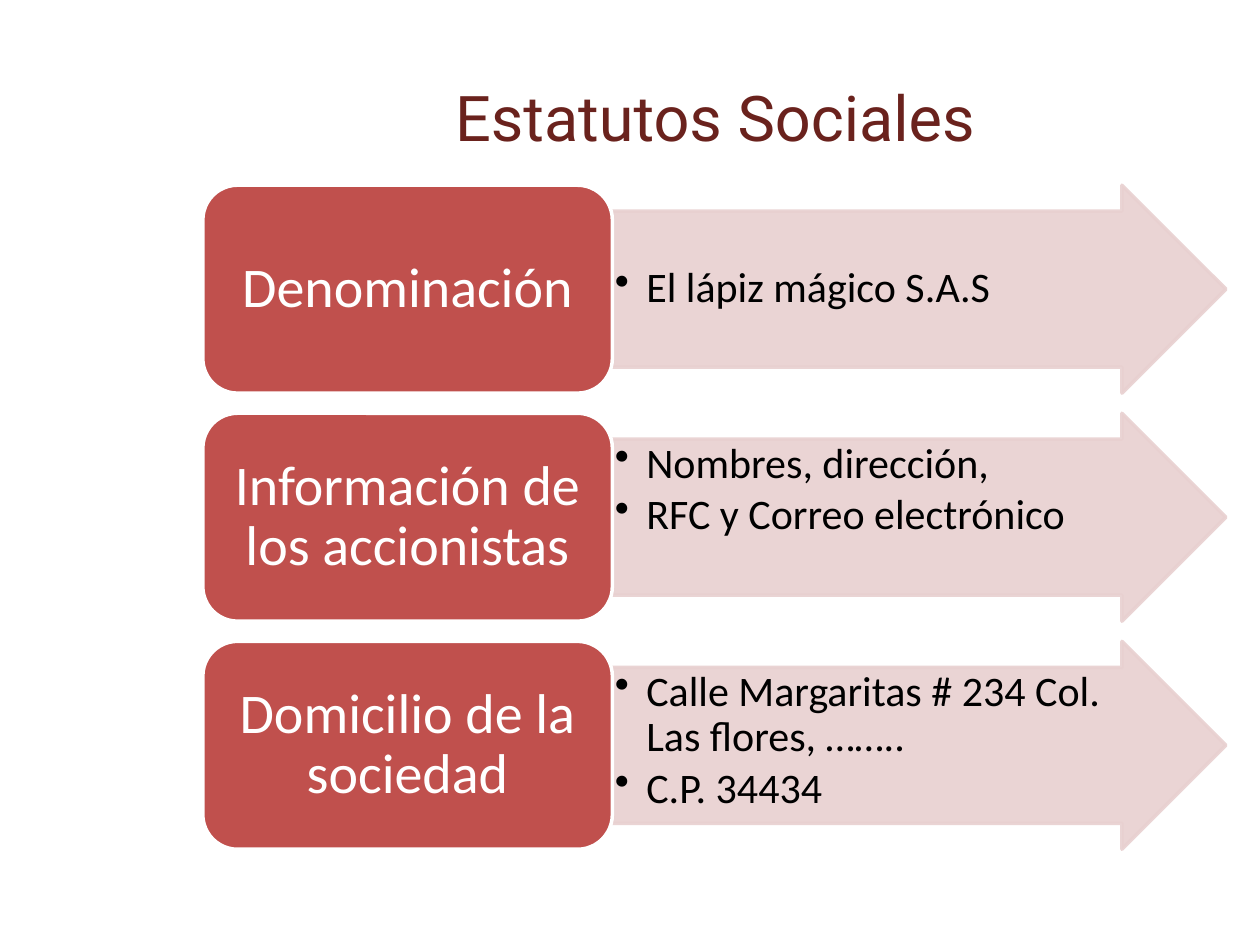
from dataclasses import dataclass

from lxml import etree
from pptx import Presentation
from pptx import util as u
from pptx.dml.color import RGBColor
from pptx.enum import shapes, text
from pptx.oxml.ns import qn


@dataclass(frozen=True)
class Theme:
    head: str = "Roboto"
    body: str = "Calibri"
    wine: str = "6A221D"
    red: str = "C0504D"
    pink: str = "E8D0D0"
    white: str = "FFFFFF"
    black: str = "000000"
    big: int = 36
    mid: int = 32
    small: int = 24
    line: int = 2
    alpha: int = 90


T = Theme()
LEFT, TOP = 1.61, 1.47
BOX_W, ARROW_W = 3.25, 4.87
ROW_H, STEP = 1.65, 1.81
ROWS = [
    ("Denominación", ["El lápiz mágico S.A.S"]),
    ("Información de los accionistas",
     ["Nombres, dirección,", "RFC y Correo electrónico"]),
    ("Domicilio de la sociedad",
     ["Calle Margaritas # 234 Col. Las flores, ……..", "C.P. 34434"]),
]


def fade(fill):
    """Make a solid fill slightly transparent."""
    color = fill._xPr.find(qn("a:solidFill"))[0]
    etree.SubElement(color, qn("a:alpha"), val=str(T.alpha * 1000))


def bullet(par):
    par.level = 1
    props = par._p.get_or_add_pPr()
    props.set("marL", str(u.Inches(0.25)))
    props.set("indent", str(u.Inches(-0.25)))
    etree.SubElement(props, qn("a:buChar"), char="•")


def write(shape, lines, size, color, font=T.body, align=text.PP_ALIGN.CENTER,
          anchor=text.MSO_ANCHOR.MIDDLE, pad=(0.1, 0.05), after=0,
          lead=0.9, dots=False):
    frame = shape.text_frame
    frame.word_wrap = True
    frame.vertical_anchor = anchor
    frame.margin_left = frame.margin_right = u.Inches(pad[0])
    frame.margin_top = frame.margin_bottom = u.Inches(pad[1])
    for i, line in enumerate(lines):
        par = frame.add_paragraph() if i else frame.paragraphs[0]
        par.alignment = align
        par.line_spacing = lead
        par.space_before = u.Pt(0)
        par.space_after = u.Pt(after)
        if dots:
            bullet(par)
        run = par.add_run()
        run.text = line
        run.font.size = u.Pt(size)
        run.font.name = font
        run.font.color.rgb = RGBColor.from_string(color)


def block(slide, kind, x, y, w, fill, line):
    shape = slide.shapes.add_shape(
        kind, *(u.Inches(v) for v in (x, y, w, ROW_H)))
    shape.shadow.inherit = False
    shape.fill.solid()
    shape.fill.fore_color.rgb = RGBColor.from_string(fill)
    shape.line.color.rgb = RGBColor.from_string(line)
    shape.line.width = u.Pt(T.line)
    return shape


def arrow(slide, y, items):
    shape = block(slide, shapes.MSO_SHAPE.RIGHT_ARROW, LEFT + BOX_W, y,
                  ARROW_W, T.pink, T.pink)
    shape.adjustments[0] = 0.75
    shape.adjustments[1] = 0.5
    fade(shape.fill)
    fade(shape.line.fill)
    spot = text.MSO_ANCHOR.TOP if len(items) > 1 else text.MSO_ANCHOR.MIDDLE
    write(shape, items, T.small, T.black, align=text.PP_ALIGN.LEFT,
          anchor=spot, pad=(0.02, 0.02), after=0.15 * T.small, dots=True)


def label(slide, y, name):
    shape = block(slide, shapes.MSO_SHAPE.ROUNDED_RECTANGLE, LEFT, y,
                  BOX_W, T.red, T.white)
    write(shape, [name], T.mid, T.white, pad=(0.13, 0.07))


def title(slide, words):
    shape = slide.shapes.title
    shape.left, shape.top = u.Inches(1.85), u.Inches(0.3)
    shape.width, shape.height = u.Inches(7.65), u.Inches(1.25)
    write(shape, [words], T.big, T.wine, font=T.head, lead=1.0)


def main():
    deck = Presentation()
    deck.slide_width, deck.slide_height = u.Inches(10), u.Inches(7.5)
    slide = deck.slides.add_slide(deck.slide_layouts[5])
    title(slide, "Estatutos Sociales")
    for i, (name, items) in enumerate(ROWS):
        y = TOP + i * STEP
        arrow(slide, y, items)
        label(slide, y, name)
    deck.save("out.pptx")


if __name__ == "__main__":
    main()
